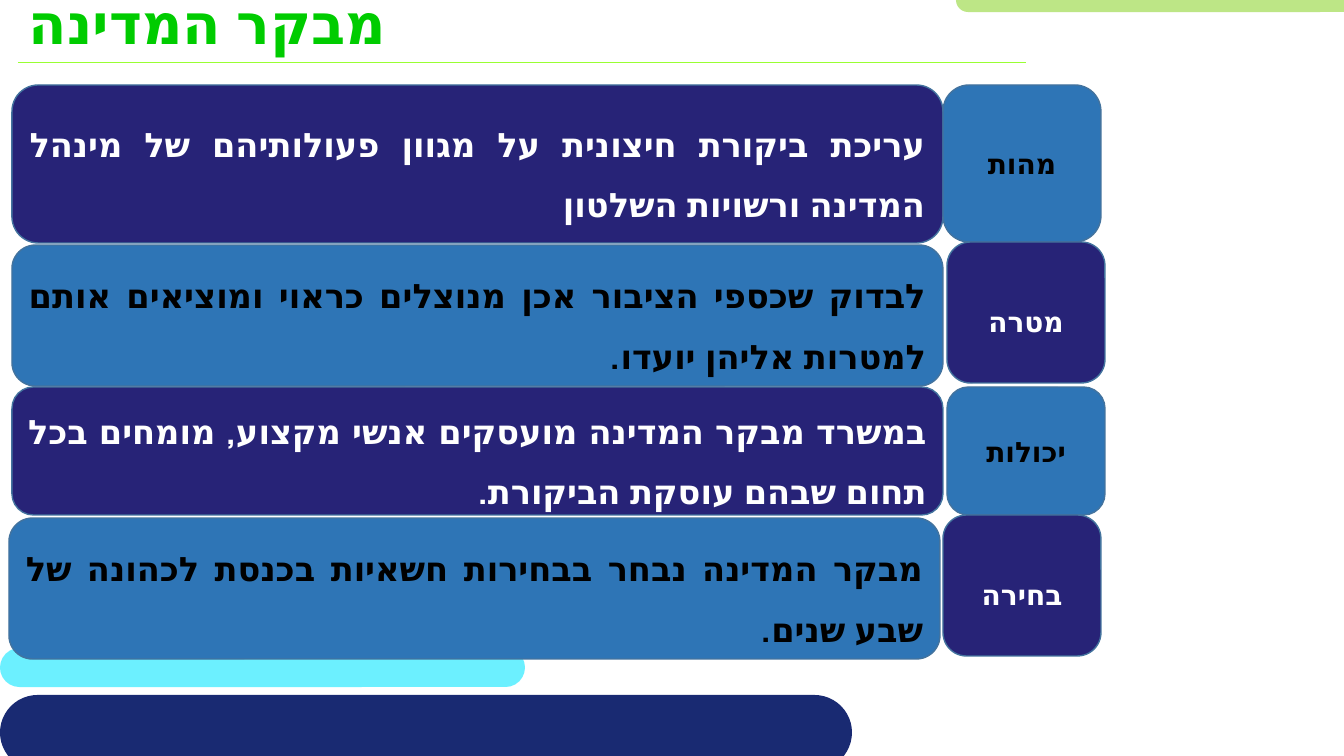
import pptx
import pptx.util
import pptx.dml.color
import pptx.enum.lang
import pptx.enum.shapes
import pptx.enum.text
import lxml.etree

TITLE = "מבקר המדינה"
# label, body text, (body left, top, height), (label left, top, height)
ROWS = [
    ("מהות", "עריכת ביקורת חיצונית על מגוון פעולותיהם של מינהל המדינה ורשויות השלטון",
     (12, 85, 158), (943, 85, 157)),
    ("מטרה", "לבדוק שכספי הציבור אכן מנוצלים כראוי ומוציאים אותם למטרות אליהן יועדו.",
     (12, 245, 141), (947, 242, 141)),
    ("יכולות", "במשרד מבקר המדינה מועסקים אנשי מקצוע, מומחים בכל תחום שבהם עוסקת הביקורת.",
     (12, 387, 128), (947, 387, 128)),
    ("בחירה", "מבקר המדינה נבחר בבחירות חשאיות בכנסת לכהונה של שבע שנים.",
     (9, 518, 141), (943, 515, 141)),
]
# left, top, width, height, fill
BARS = [
    (0, 648, 525, 39, "6CF0FF"),
    (956, -12, 585, 24, "BDE686"),
    (0, 695, 852, 75, "192A72"),
]
BODY_WIDTH, LABEL_WIDTH = 931, 158
NAVY, BLUE, OUTLINE = "272377", "2E75B6", "43739E"
WHITE, BLACK = "FFFFFF", "000000"
FONT = "TeX Gyre Adventor"
ALIGN = pptx.enum.text.PP_ALIGN
ANCHOR = pptx.enum.text.MSO_ANCHOR


def px(length):
    return round(length * 914400 / 100.8)


def rgb(value):
    return pptx.dml.color.RGBColor.from_string(value)


def write(shape, text, size, color, align, spacing=1.0, anchor=ANCHOR.MIDDLE):
    """Put one bold right-to-left paragraph in a shape."""
    frame = shape.text_frame
    frame.word_wrap = True
    frame.vertical_anchor = anchor
    paragraph = frame.paragraphs[0]
    paragraph.alignment = align
    paragraph.line_spacing = spacing
    paragraph._p.get_or_add_pPr().set("rtl", "1")
    run = paragraph.add_run()
    run.text = text
    font = run.font
    font.name, font.size, font.bold = FONT, pptx.util.Pt(size), True
    font.color.rgb = rgb(color)
    font.language_id = pptx.enum.lang.MSO_LANGUAGE_ID.HEBREW
    # Hebrew takes the complex-script font
    script_font = lxml.etree.SubElement(font._element, pptx.oxml.ns.qn("a:cs"))
    script_font.set("typeface", FONT)


def add_box(slide, left, top, width, height, fill, line=None, corner=0.1667):
    shape = slide.shapes.add_shape(pptx.enum.shapes.MSO_SHAPE.ROUNDED_RECTANGLE,
                                   px(left), px(top), px(width), px(height))
    shape.adjustments[0] = corner
    shape.shadow.inherit = False
    shape.fill.solid()
    shape.fill.fore_color.rgb = rgb(fill)
    if line:
        shape.line.color.rgb = rgb(line)
        shape.line.width = pptx.util.Pt(1)
    else:
        shape.line.fill.background()
    return shape


def main():
    presentation = pptx.Presentation()
    presentation.slide_width, presentation.slide_height = px(1344), px(756)
    slide = presentation.slides.add_slide(presentation.slide_layouts[6])

    # Decorative bars
    for left, top, width, height, fill in BARS:
        add_box(slide, left, top, width, height, fill, corner=0.5)

    # Title and rule
    rule = slide.shapes.add_connector(pptx.enum.shapes.MSO_CONNECTOR.STRAIGHT,
                                      px(18), px(62), px(1026), px(62))
    rule.line.color.rgb = rgb("99FF33")
    rule.line.width = pptx.util.Pt(0.5)
    lxml.etree.SubElement(rule._element.spPr, pptx.oxml.ns.qn("a:effectLst"))
    title = slide.shapes.add_textbox(px(19), px(-16), px(948), px(109))
    write(title, TITLE, 40, "00CC00", ALIGN.LEFT, anchor=ANCHOR.TOP)

    # Rows: body and label swap colours on every row
    schemes = {True: (NAVY, WHITE), False: (BLUE, BLACK)}
    for index, (label, body, body_place, label_place) in enumerate(ROWS):
        dark_body = index % 2 == 0
        left, top, height = body_place
        fill, color = schemes[dark_body]
        box = add_box(slide, left, top, BODY_WIDTH, height, fill, OUTLINE)
        write(box, body, 24, color, ALIGN.JUSTIFY, spacing=1.5)

        left, top, height = label_place
        fill, color = schemes[not dark_body]
        box = add_box(slide, left, top, LABEL_WIDTH, height, fill, OUTLINE)
        write(box, label, 20, color, ALIGN.CENTER, spacing=1.0 if dark_body else 1.5)

    presentation.save("out.pptx")


if __name__ == "__main__":
    main()
